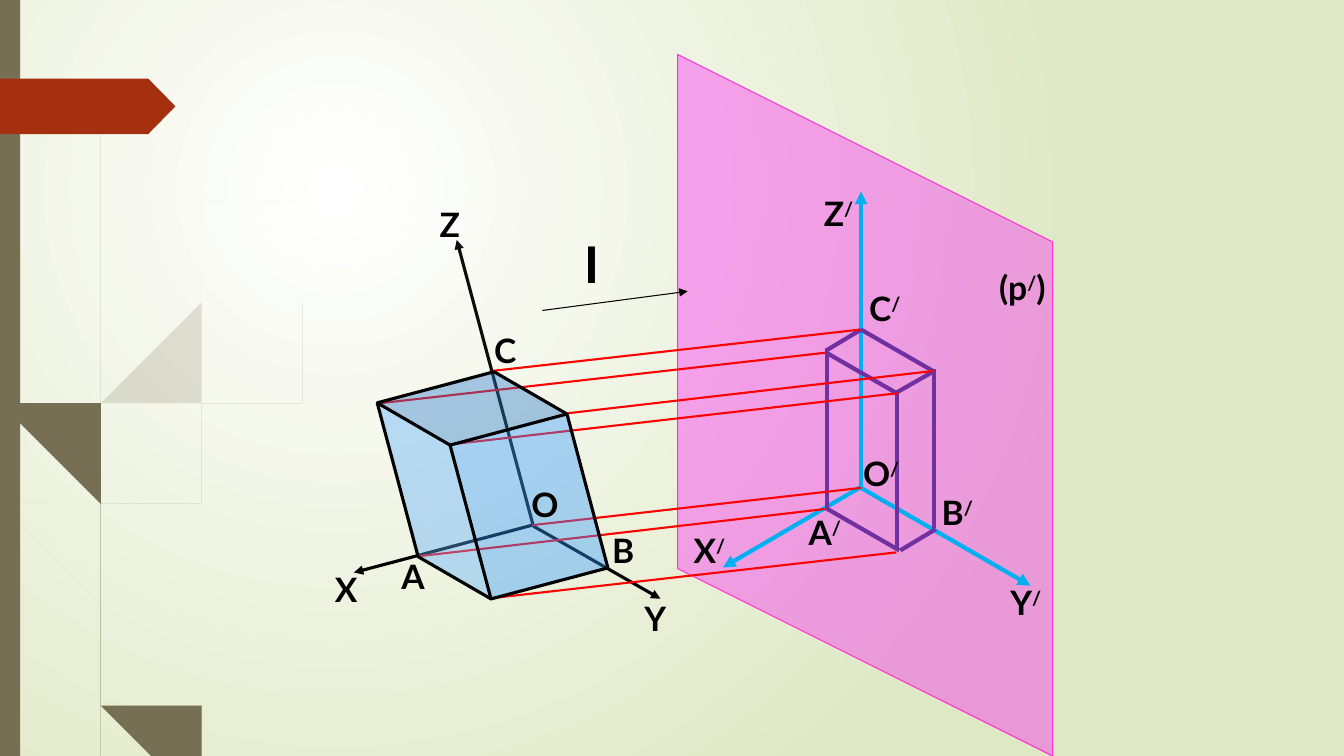
"""Build a slide showing the parallel projection of a cube and its axes onto a plane."""
import pptx
import pptx.dml.color
import pptx.enum.shapes
import pptx.enum.text
import pptx.oxml
import pptx.oxml.ns
import pptx.util
from pptx.util import Inches

RGBColor = pptx.dml.color.RGBColor
SHAPES = pptx.enum.shapes.MSO_SHAPE

BLACK = RGBColor(0x00, 0x00, 0x00)
NEAR_BLACK = RGBColor(0x0D, 0x0D, 0x0D)
WHITE = RGBColor(0xFF, 0xFF, 0xFF)
PALE_GREEN = RGBColor(0xDF, 0xE8, 0xC4)
OLIVE = RGBColor(0x76, 0x6F, 0x54)
RUST = RGBColor(0xA5, 0x30, 0x10)
MAGENTA = RGBColor(0xFF, 0x00, 0xFF)
PINK = RGBColor(0xFF, 0x33, 0xCC)
SKY = RGBColor(0x00, 0xB0, 0xF0)
PURPLE = RGBColor(0x70, 0x30, 0xA0)
RED = RGBColor(0xFF, 0x00, 0x00)
BLUE = RGBColor(0x33, 0x99, 0xFF)

PALE_BLADES = [
    ([(0, 2.82), (0.09, 3.22), (0.11, 3.5), (0.17, 3.76), (0.31, 4.69), (0.7, 6.19),
      (0.93, 6.83), (1.01, 7.14), (1.19, 7.5)],
     [(1.14, 7.5), (1.01, 7.14), (0.92, 6.93), (0.65, 6.21), (0.28, 4.7), (0.11, 3.5),
      (0.1, 3.44), (0, 2.99)]),
    ([(0.14, 3.45), (0.62, 5.2), (0.85, 5.86), (0.92, 6.07), (1.27, 6.92), (1.55, 7.5)],
     [(1.5, 7.5), (1.23, 6.94), (0.88, 6.1), (0.84, 5.99), (0.58, 5.22), (0.17, 3.76)]),
    ([(3.12, 1.53), (2.68, 1.97), (2.28, 2.44), (1.58, 3.48), (1.07, 4.61), (0.85, 5.84),
      (0.87, 6.46), (0.93, 6.83), (0.99, 7.07), (1.19, 7.5)],
     [(1.24, 7.5), (1.05, 7.11), (0.91, 6.46), (0.88, 6.1), (0.88, 5.84), (1.1, 4.62),
      (1.6, 3.49), (2.29, 2.45), (2.68, 1.98), (3.12, 1.54)]),
]
DARK_BLADES = [
    ([(0.04, 0), (0.05, 0.48), (0.08, 1.09), (0.19, 2.32), (0.36, 3.55), (0.55, 4.53),
      (0.64, 5.05), (0.72, 5.56), (0.98, 6.57), (1.1, 6.91), (1.16, 7.17), (1.31, 7.5)],
     [(1.27, 7.5), (1.17, 7.22), (0.93, 6.59), (0.68, 5.57), (0.57, 4.77), (0.33, 3.55),
      (0.17, 2.33), (0.07, 1.1), (0.04, 0.48), (0.03, 0)]),
    ([(0.7, 1.41), (0.62, 1.93), (0.56, 2.45), (0.52, 3.49), (0.55, 4.49), (0.64, 5.05),
      (0.88, 5.92), (1.06, 6.45), (1.32, 7.08), (1.52, 7.5)],
     [(1.57, 7.5), (1.36, 7.06), (1.13, 6.49), (0.93, 5.9), (0.6, 4.72), (0.54, 3.49),
      (0.58, 2.45), (0.63, 1.93), (0.7, 1.41)]),
    ([(2.6, 3.44), (2.31, 3.73), (2.04, 4.05), (1.56, 4.74), (1.22, 5.51), (1.06, 6.31),
      (1.1, 6.91), (1.17, 7.22), (1.3, 7.5)],
     [(1.36, 7.5), (1.22, 7.19), (1.11, 6.56), (1.11, 6.33), (1.25, 5.52), (1.58, 4.76),
      (2.05, 4.06), (2.31, 3.74), (2.61, 3.44)]),
]
PROJECTED_AXES = [(8.54, 4.84, 8.54, 1.9), (8.54, 4.84, 10.22, 5.81), (8.54, 4.83, 7.17, 5.63)]
PROJECTED_EDGES = [
    (8.54, 3.27, 9.27, 3.69), (8.19, 5.04, 8.92, 5.46), (8.18, 3.49, 8.91, 3.91),
    (9.28, 5.25, 8.93, 5.46), (8.54, 3.27, 8.19, 3.48), (9.26, 5.24, 9.26, 3.66),
    (8.9, 5.45, 8.9, 3.87), (9.25, 3.69, 8.9, 3.89), (8.2, 5.05, 8.2, 3.47)]
PROJECTION_RAYS = [
    (4.88, 3.68, 8.53, 3.27), (4.91, 5.93, 8.89, 5.48), (3.77, 4, 8.18, 3.5),
    (4.14, 5.52, 8.18, 5.05), (5.28, 5.21, 8.54, 4.84), (5.63, 4.1, 9.26, 3.68),
    (4.46, 4.41, 8.91, 3.9)]
SPACE_LABELS = [
    ("X", 3.32, 5.64), ("Y", 6.39, 5.93), ("Z", 4.36, 2.02), ("O", 5.27, 4.8),
    ("A", 3.98, 5.52), ("B", 6.07, 5.26), ("C", 4.9, 3.27)]
PLANE_LABELS = [
    ("O", 8.56, 4.49), ("X", 6.88, 5.26), ("Y", 10.02, 5.77), ("Z", 8.17, 1.91),
    ("C", 8.62, 2.86), ("A", 8.02, 5.08), ("B", 9.34, 4.88)]


def sub_element(parent, tag, **attributes):
    child = parent.makeelement(pptx.oxml.ns.qn(tag), attributes)
    parent.append(child)
    return child


def paint_background(slide):
    fill = slide.background.fill
    fill.gradient()
    for stop, color, position in zip(fill.gradient_stops, (WHITE, PALE_GREEN), (0, 1)):
        stop.color.rgb = color
        stop.position = position
    gradient = slide.background._cSld.find(".//" + pptx.oxml.ns.qn("a:gradFill"))
    gradient.remove(gradient.find(pptx.oxml.ns.qn("a:lin")))
    circle = sub_element(gradient, "a:path", path="circle")
    sub_element(circle, "a:fillToRect", l="50000", t="50000", r="100000", b="100000")


def style(shape, color, opacity=100, outline=None, width=0):
    shape.shadow.inherit = False
    shape.fill.solid()
    shape.fill.fore_color.rgb = color
    if opacity < 100:
        fill_color = shape._element.spPr.find(".//" + pptx.oxml.ns.qn("a:srgbClr"))
        sub_element(fill_color, "a:alpha", val=str(opacity * 1000))
    if outline is None:
        shape.line.fill.background()
    else:
        shape.line.color.rgb = outline
        shape.line.width = pptx.util.Pt(width)


def add_solid(slide, preset, box, color, adjustment=None, rotation=0, **look):
    solid = slide.shapes.add_shape(preset, *map(Inches, box))
    solid.rotation = rotation
    if adjustment is not None:
        solid.adjustments[0] = adjustment
    style(solid, color, **look)


def smooth_edge(knots, steps=6):
    """Return points of a Catmull-Rom curve through the knots."""
    padded = [knots[0], *knots, knots[-1]]
    points = [knots[0]]
    for a, b, c, d in zip(padded, padded[1:], padded[2:], padded[3:]):
        for step in range(1, steps + 1):
            t = step / steps
            points.append(tuple(
                0.5 * (2 * q + (r - p) * t + (2 * p - 5 * q + 4 * r - s) * t ** 2
                       + (3 * q - p - 3 * r + s) * t ** 3)
                for p, q, r, s in zip(a, b, c, d)))
    return points


def add_blade(slide, outward, back, opacity):
    outline = smooth_edge(outward) + smooth_edge(back)
    builder = slide.shapes.build_freeform(*outline[0], scale=Inches(1))
    builder.add_line_segments(outline[1:])
    style(builder.convert_to_shape(), OLIVE, opacity)


def add_line(slide, ends, color, width, arrow=False):
    line = slide.shapes.add_connector(
        pptx.enum.shapes.MSO_CONNECTOR.STRAIGHT, *map(Inches, ends))
    line.line.color.rgb = color
    line.line.width = pptx.util.Pt(width)
    if arrow:
        sub_element(line.line._get_or_add_ln(), "a:tailEnd", type="triangle")
    sub_element(line._element.spPr, "a:effectLst")


def add_label(slide, pieces, box, size=24, font="Lato", inset=0):
    """Add a bold label whose every second piece is raised."""
    frame = slide.shapes.add_textbox(*map(Inches, box)).text_frame
    frame.word_wrap = True
    frame.auto_size = pptx.enum.text.MSO_AUTO_SIZE.SHAPE_TO_FIT_TEXT
    frame.margin_left = frame.margin_right = Inches(inset)
    frame.margin_top = frame.margin_bottom = Inches(inset / 2)
    paragraph = frame.paragraphs[0]
    paragraph.font.name = font
    paragraph.font.size = pptx.util.Pt(size)
    paragraph.font.bold = True
    paragraph.font.color.rgb = BLACK
    for index, piece in enumerate(pieces):
        run = paragraph.add_run()
        run.text = piece
        if index % 2:
            run._r.get_or_add_rPr().set("baseline", "30000")


def main():
    presentation = pptx.Presentation()
    presentation.slide_width = Inches(13.33)
    presentation.slide_height = Inches(7.5)
    slide = presentation.slides.add_slide(presentation.slide_layouts[6])
    paint_background(slide)

    for blades, opacity in ((PALE_BLADES, 20), (DARK_BLADES, 100)):
        for outward, back in blades:
            add_blade(slide, outward, back, opacity)
    add_solid(slide, SHAPES.RECTANGLE, (0, 0, 0.2, 7.5), OLIVE)
    add_solid(slide, SHAPES.PENTAGON, (0, 0.78, 1.74, 0.55), RUST, 0.49)

    add_solid(slide, SHAPES.PARALLELOGRAM, (5.1, 2.16, 6.96, 3.72), MAGENTA, 0.5, 270,
              opacity=34, outline=PINK, width=0.75)
    for axis in PROJECTED_AXES:
        add_line(slide, axis, SKY, 3, arrow=True)
    add_line(slide, (5.29, 5.22, 4.53, 2.38), NEAR_BLACK, 2.25, arrow=True)
    add_line(slide, (5.29, 5.22, 6.55, 5.94), BLACK, 2.25, arrow=True)
    add_line(slide, (5.28, 5.21, 3.51, 5.68), BLACK, 2.25, arrow=True)
    for edge in PROJECTED_EDGES:
        add_line(slide, edge, PURPLE, 3)
    for ray in PROJECTION_RAYS:
        add_line(slide, ray, RED, 1.5)
    add_solid(slide, SHAPES.CUBE, (3.8, 3.92, 2.17, 1.79), BLUE, 0.33, 255.1,
              opacity=40, outline=BLACK, width=2.25)

    for letter, left, top in SPACE_LABELS:
        add_label(slide, [letter], (left, top, 0.48, 0.4))
    for letter, left, top in PLANE_LABELS:
        add_label(slide, [letter, "/"], (left, top, 0.41, 0.4))
    add_label(slide, ["(p", "/", ")"], (9.91, 2.65, 0.61, 0.4))
    add_line(slide, (5.38, 3.08, 6.82, 2.89), BLACK, 0.75, arrow=True)
    add_label(slide, ["l"], (5.7, 2.26, 0.29, 0.71), size=36, font="Arial", inset=0.1)
    presentation.save("out.pptx")


if __name__ == "__main__":
    main()
